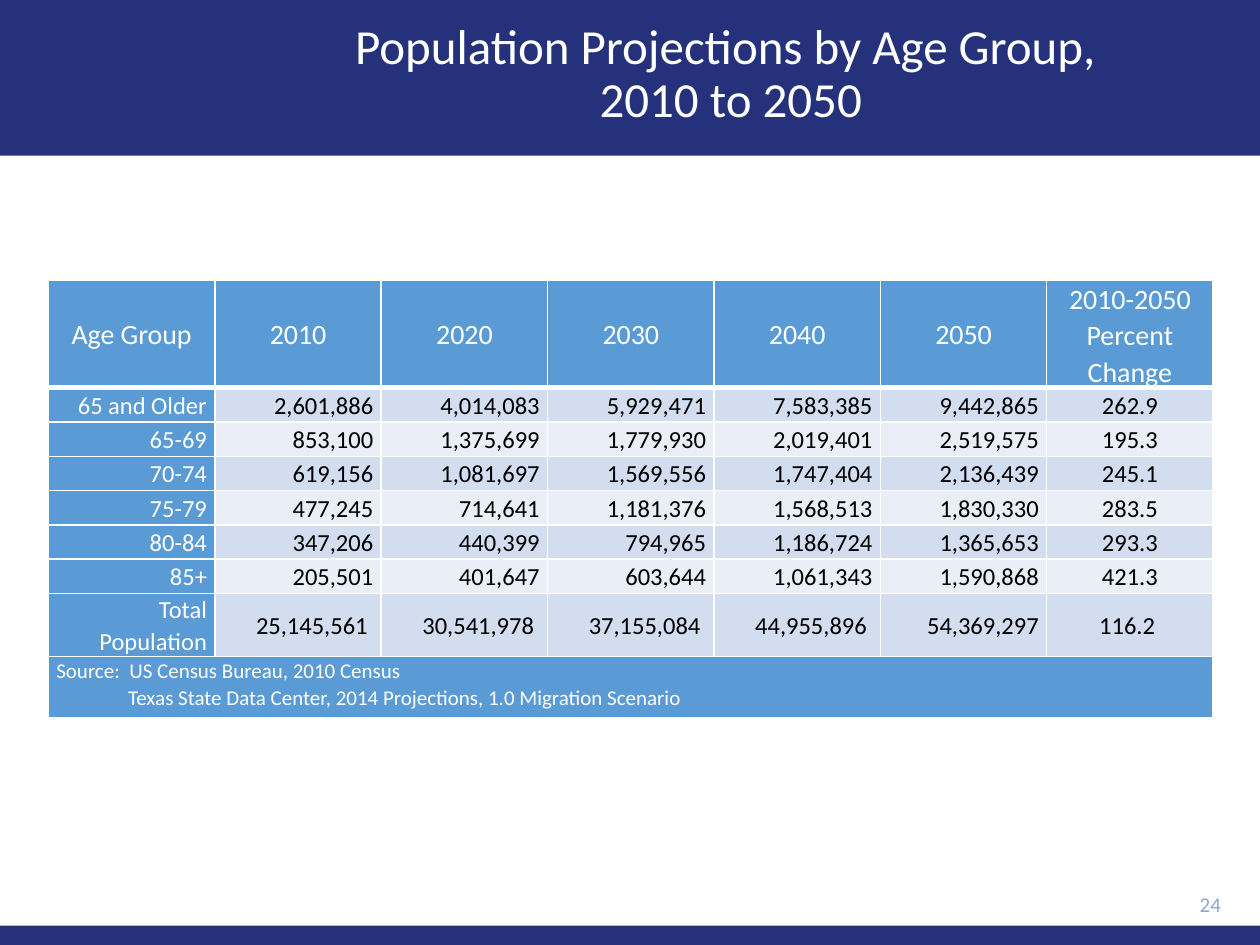
from lxml import etree
from pptx import Presentation
from pptx.dml.color import RGBColor
from pptx.enum.shapes import MSO_SHAPE
from pptx.enum.text import MSO_ANCHOR, PP_ALIGN
from pptx.oxml.ns import qn
from pptx.util import Pt

RECTANGLE = MSO_SHAPE.RECTANGLE
MIDDLE, TOP = MSO_ANCHOR.MIDDLE, MSO_ANCHOR.TOP
LEFT, CENTER, RIGHT = PP_ALIGN.LEFT, PP_ALIGN.CENTER, PP_ALIGN.RIGHT

NAVY = RGBColor(0x25, 0x32, 0x7B)
BLUE = RGBColor(0x5B, 0x9B, 0xD5)
BAND_DARK = RGBColor(0xD2, 0xDE, 0xEF)
BAND_LIGHT = RGBColor(0xEA, 0xEF, 0xF7)
PAGE_BLUE = RGBColor(0x8F, 0xA5, 0xD1)
WHITE = RGBColor(0xFF, 0xFF, 0xFF)
BLACK = RGBColor(0, 0, 0)
FONT = "Calibri"

SLIDE_WIDTH, SLIDE_HEIGHT = 720, 540
HEADINGS = [["Age Group"], ["2010"], ["2020"], ["2030"], ["2040"], ["2050"],
            ["2010-2050", "Percent Change"]]
PROJECTIONS = [
    ["65 and Older", "2,601,886", "4,014,083", "5,929,471", "7,583,385", "9,442,865", "262.9"],
    ["65-69", "853,100", "1,375,699", "1,779,930", "2,019,401", "2,519,575", "195.3"],
    ["70-74", "619,156", "1,081,697", "1,569,556", "1,747,404", "2,136,439", "245.1"],
    ["75-79", "477,245", "714,641", "1,181,376", "1,568,513", "1,830,330", "283.5"],
    ["80-84", "347,206", "440,399", "794,965", "1,186,724", "1,365,653", "293.3"],
    ["85+", "205,501", "401,647", "603,644", "1,061,343", "1,590,868", "421.3"],
    ["Total Population", "25,145,561 ", "30,541,978 ", "37,155,084 ", "44,955,896 ",
     "54,369,297", "116.2 "],
]
SOURCES = ["Source:  US Census Bureau, 2010 Census",
           "Texas State Data Center, 2014 Projections, 1.0 Migration Scenario"]
ROW_HEIGHTS = [40] + [19.6] * 6 + [26, 35]
COLUMN_WIDTH = 95.1


def add_run(paragraph, text, size, color):
    run = paragraph.add_run()
    run.text = text
    run.font.name = FONT
    run.font.size = Pt(size)
    run.font.color.rgb = color


def add_band(slide, left, top, width, height):
    band = slide.shapes.add_shape(RECTANGLE, Pt(left), Pt(top), Pt(width), Pt(height))
    band.shadow.inherit = False
    band.fill.solid()
    band.fill.fore_color.rgb = NAVY
    band.line.fill.background()


def add_label(slide, left, top, width, height, lines, size, color, align):
    label = slide.shapes.add_textbox(Pt(left), Pt(top), Pt(width), Pt(height))
    frame = label.text_frame
    frame.word_wrap = True
    frame.vertical_anchor = MIDDLE
    paragraph = frame.paragraphs[0]
    paragraph.alignment = align
    for index, line in enumerate(lines):
        if index:
            paragraph.add_line_break()
        add_run(paragraph, line, size, color)
    return paragraph


def add_header(slide, left, top, width, height):
    add_band(slide, left, top, width, height)
    title = add_label(slide, left + 122.4, top + 7.2, width - 129.6, 72,
                      ["Population Projections by Age Group, ", "2010 to 2050"],
                      28, WHITE, CENTER)
    title.line_spacing = 0.9


def add_footer(slide, left, top, width, height):
    add_band(slide, left, top, width, height)
    add_label(slide, left + width - 79.2, top - 24.5, 64, 24.5, ["24"], 12, PAGE_BLUE, RIGHT)


def set_borders(cell, top, bottom):
    properties = cell._tc.get_or_add_tcPr()
    edges = [("lnL", 1), ("lnR", 1), ("lnT", top), ("lnB", bottom)]
    for index, (edge, width) in enumerate(edges):
        line = etree.Element(qn(f"a:{edge}"), w=str(Pt(width)))
        fill = etree.SubElement(line, qn("a:solidFill"))
        etree.SubElement(fill, qn("a:srgbClr"), val=str(WHITE))
        properties.insert(index, line)


def fill_cell(cell, lines, size, color, background, align, anchor=MIDDLE):
    cell.margin_left = cell.margin_right = Pt(4.5)
    cell.margin_top = cell.margin_bottom = 0
    cell.vertical_anchor = anchor
    cell.fill.solid()
    cell.fill.fore_color.rgb = background
    frame = cell.text_frame
    for index, line in enumerate(lines):
        paragraph = frame.add_paragraph() if index else frame.paragraphs[0]
        paragraph.alignment = align
        paragraph.line_spacing = 1.07
        add_run(paragraph, line, size, color)


def add_projections(slide, left, top, width, height):
    rows, columns = len(ROW_HEIGHTS), len(HEADINGS)
    table = slide.shapes.add_table(rows, columns, Pt(left), Pt(top), Pt(width), Pt(height)).table
    table.first_row = False
    table.horz_banding = False
    for row, row_height in zip(table.rows, ROW_HEIGHTS):
        row.height = Pt(row_height)
    for column in table.columns:
        column.width = Pt(width / columns)

    for index, heading in enumerate(HEADINGS):
        fill_cell(table.cell(0, index), heading, 16, WHITE, BLUE, CENTER)
    for row, values in enumerate(PROJECTIONS, start=1):
        band = BAND_DARK if row % 2 else BAND_LIGHT
        for column, value in enumerate(values):
            color, background = (BLACK, band) if column else (WHITE, BLUE)
            align = CENTER if column == columns - 1 else RIGHT
            fill_cell(table.cell(row, column), [value], 14, color, background, align)

    source = table.cell(rows - 1, 0)
    source.merge(table.cell(rows - 1, columns - 1))
    fill_cell(source, SOURCES, 12, WHITE, BLUE, LEFT, TOP)
    second_source = source.text_frame.paragraphs[1]._p.get_or_add_pPr()
    second_source.set("marL", str(Pt(41)))
    second_source.set("indent", "0")

    for row in range(rows):
        for column in range(columns):
            set_borders(table.cell(row, column), 3 if row == 1 else 1, 3 if row == 0 else 1)


def main():
    presentation = Presentation()
    presentation.slide_width = Pt(SLIDE_WIDTH)
    presentation.slide_height = Pt(SLIDE_HEIGHT)
    slide = presentation.slides.add_slide(presentation.slide_layouts[6])
    add_header(slide, 0, 0, SLIDE_WIDTH, 89)
    add_footer(slide, 0, 529, SLIDE_WIDTH, 11)
    add_projections(slide, 27.7, 160, COLUMN_WIDTH * len(HEADINGS), sum(ROW_HEIGHTS))
    presentation.save("out.pptx")


if __name__ == "__main__":
    main()
